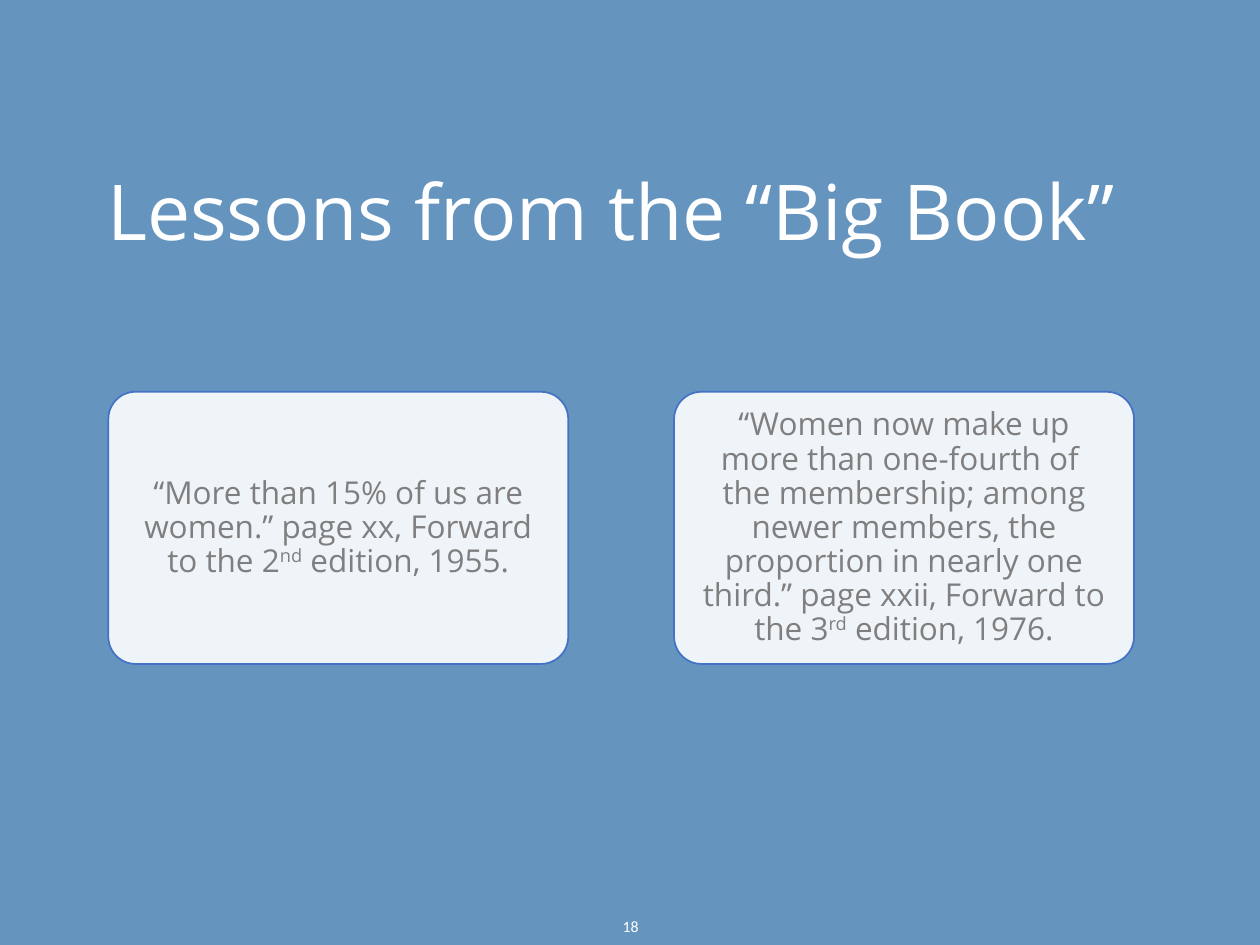
from dataclasses import dataclass

from lxml import etree
from pptx import Presentation
from pptx.dml.color import RGBColor
from pptx.enum.shapes import MSO_SHAPE
from pptx.enum.text import MSO_ANCHOR, MSO_AUTO_SIZE, PP_ALIGN
from pptx.oxml.ns import qn
from pptx.util import Inches, Pt

ROUND = MSO_SHAPE.ROUNDED_RECTANGLE
TOP, MIDDLE = MSO_ANCHOR.TOP, MSO_ANCHOR.MIDDLE
LEFT, CENTER = PP_ALIGN.LEFT, PP_ALIGN.CENTER
NO_FIT = MSO_AUTO_SIZE.NONE


@dataclass(frozen=True)
class Theme:
    back: str = "6595BF"
    light: str = "FFFFFF"
    edge: str = "4472C4"
    text: str = "7F7F7F"
    font: str = "Open Sans"
    small: str = "Calibri"
    title: int = 44
    body: int = 18
    number: int = 9


class Deck:
    def __init__(self, theme):
        self.theme = theme
        self.prs = Presentation()
        self.prs.slide_width, self.prs.slide_height = Inches(10), Inches(7.5)
        self.slide = self.prs.slides.add_slide(self.prs.slide_layouts[5])
        self.paint(self.slide.background.fill, theme.back)

    def paint(self, fill, color):
        fill.solid()
        fill.fore_color.rgb = RGBColor.from_string(color)

    def frame(self, shape, anchor, align, space=None):
        """Set up the text frame and return its first paragraph."""
        frame = shape.text_frame
        frame.word_wrap = True
        frame.auto_size = NO_FIT
        frame.vertical_anchor = anchor
        para = frame.paragraphs[0]
        para.alignment = align
        para.line_spacing = space
        return para

    def run(self, para, text, size, color, font, base=0):
        """Add one run; base is the superscript rise in percent."""
        run = para.add_run()
        run.text = text
        run.font.size = Pt(size)
        run.font.name = font
        run.font.color.rgb = RGBColor.from_string(color)
        if base:
            run.font._element.set("baseline", str(base * 1000))

    def title(self, text):
        look, shape = self.theme, self.slide.shapes.title
        shape.left, shape.top = Inches(0.75), Inches(1.33)
        shape.width, shape.height = Inches(8.5), Inches(1.25)
        para = self.frame(shape, TOP, LEFT, 0.9)
        self.run(para, text, look.title, look.light, look.font)

    def card(self, left, inset, parts):
        look = self.theme
        shape = self.slide.shapes.add_shape(
            ROUND, Inches(left), Inches(3.11), Inches(3.65), Inches(2.16))
        shape.adjustments[0] = 0.1
        shape.shadow.inherit = False
        self.paint(shape.fill, look.light)
        tint = shape.fill._xPr.find(qn("a:solidFill"))[0]
        etree.SubElement(tint, qn("a:alpha"), val="90000")
        self.paint(shape.line.fill, look.edge)
        shape.line.width = Pt(1)
        para = self.frame(shape, MIDDLE, CENTER, 0.9)
        frame = shape.text_frame
        frame.margin_left = frame.margin_right = Inches(inset)
        frame.margin_top = frame.margin_bottom = Inches(inset)
        for text, base in parts:
            self.run(para, text, look.body, look.text, look.font, base)

    def number(self, text):
        look = self.theme
        box = self.slide.shapes.add_textbox(
            Inches(3.88), Inches(7.15), Inches(2.25), Inches(0.4))
        para = self.frame(box, MIDDLE, CENTER)
        self.run(para, text, look.number, look.light, look.small)


def main():
    deck = Deck(Theme())
    deck.number("18")
    deck.title("Lessons from the “Big Book”")
    deck.card(0.86, 0.08, [
        ("“More than 15% of us are women.” page xx, Forward to the 2", 0),
        ("nd", 30),
        (" edition, 1955.", 0),
    ])
    deck.card(5.35, 0.13, [
        ("“Women now make up more than one-fourth of  the membership; "
         "among newer members, the proportion in nearly one third.” "
         "page xxii, Forward to the 3", 0),
        ("rd", 30),
        (" edition, 1976.", 0),
    ])
    deck.prs.save("out.pptx")


if __name__ == "__main__":
    main()
